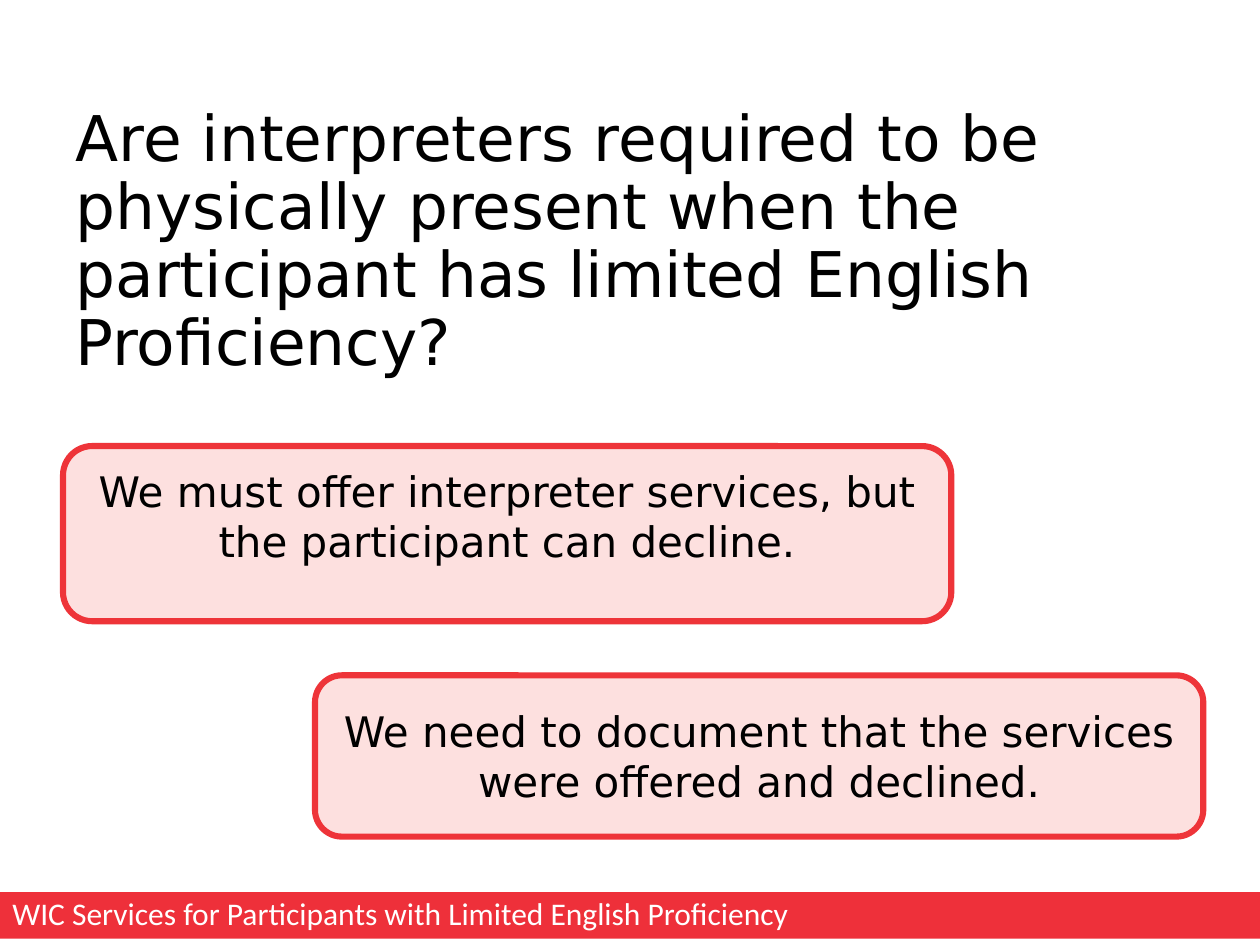
from pptx import Presentation
from pptx.dml.color import RGBColor
from pptx.enum.shapes import MSO_SHAPE
from pptx.enum.text import MSO_ANCHOR, MSO_AUTO_SIZE, PP_ALIGN
from pptx.util import Inches, Pt

LEFT, CENTER = PP_ALIGN.LEFT, PP_ALIGN.CENTER
TOP, MIDDLE = MSO_ANCHOR.TOP, MSO_ANCHOR.MIDDLE
RECTANGLE, ROUNDED = MSO_SHAPE.RECTANGLE, MSO_SHAPE.ROUNDED_RECTANGLE

COLORS = {"text": "000000", "white": "FFFFFF", "bar": "EE303A",
          "answer": "FDE0DF", "border": "EE3439"}

QUESTION = ("Are interpreters required to be physically present when the "
            "participant has limited English Proficiency?")
QUESTION_BOX = (0.5, 0.42, 9.05, 3.02)
FOOTER = "WIC Services for Participants with Limited English Proficiency"
FOOTER_BOX = (0, 7.08, 10, 0.37)
# text, box, bottom inset
ANSWERS = [
    ("We must offer interpreter services, but the participant can decline.",
     (0.5, 3.54, 7.05, 1.39), 0.33),
    ("We need to document that the services were offered and declined.",
     (2.5, 5.36, 7.05, 1.28), 0.05),
]

QUESTION_FONT = {"name": "DejaVu Sans", "size": Pt(36)}
ANSWER_FONT = {"name": "DejaVu Sans", "size": Pt(24)}
FOOTER_FONT = {"name": "Calibri", "size": Pt(18)}


def color(name):
    return RGBColor.from_string(COLORS[name])


def write(shape, text, font, font_color, frame_format, paragraph_format):
    frame = shape.text_frame
    frame.text = text
    paragraph = frame.paragraphs[0]
    run_font = paragraph.runs[0].font
    run_font.color.rgb = color(font_color)
    frame_format = {"word_wrap": True, "auto_size": MSO_AUTO_SIZE.NONE, **frame_format}
    for target, values in ((frame, frame_format), (paragraph, paragraph_format),
                           (run_font, font)):
        for name, value in values.items():
            setattr(target, name, value)


def add_box(slide, kind, box, fill, border=None):
    shape = slide.shapes.add_shape(kind, *map(Inches, box))
    shape.shadow.inherit = False
    shape.fill.solid()
    shape.fill.fore_color.rgb = color(fill)
    if border:
        shape.line.color.rgb = color(border)
        shape.line.width = Pt(3.5)
    else:
        shape.line.fill.background()
    return shape


def main():
    presentation = Presentation()
    presentation.slide_width, presentation.slide_height = Inches(10), Inches(7.5)
    slide = presentation.slides.add_slide(presentation.slide_layouts[5])

    title = slide.shapes.title
    title.left, title.top, title.width, title.height = map(Inches, QUESTION_BOX)
    write(title, QUESTION, QUESTION_FONT, "text", {"vertical_anchor": MIDDLE},
          {"alignment": LEFT, "line_spacing": 0.9})

    footer = add_box(slide, RECTANGLE, FOOTER_BOX, "bar")
    write(footer, FOOTER, FOOTER_FONT, "white", {"vertical_anchor": TOP},
          {"alignment": LEFT, "line_spacing": 0.9})

    for text, box, bottom in ANSWERS:
        answer = add_box(slide, ROUNDED, box, "answer", "border")
        write(answer, text, ANSWER_FONT, "text",
              {"vertical_anchor": MIDDLE, "margin_bottom": Inches(bottom)},
              {"alignment": CENTER})

    presentation.save("out.pptx")


if __name__ == "__main__":
    main()
